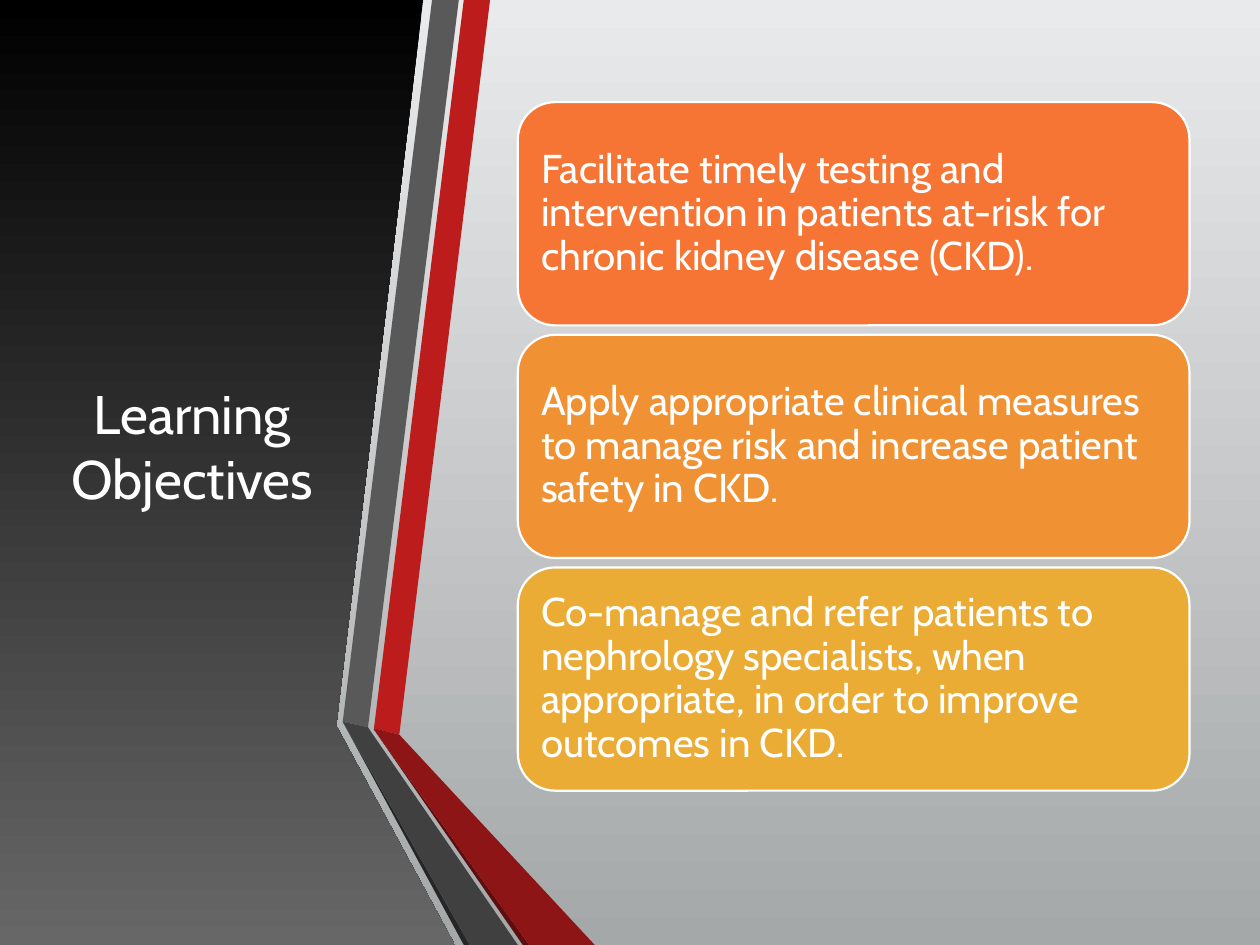
from pptx import Presentation
from pptx.dml.color import RGBColor
from pptx.enum.shapes import MSO_SHAPE as Form
from pptx.enum.text import MSO_ANCHOR as Anchor, MSO_AUTO_SIZE as Fit, PP_ALIGN as Align
from pptx.util import Cm, Pt

TITLE = "Learning Objectives"
GOALS = [
    ("Facilitate timely testing and intervention in patients at-risk for chronic kidney disease (CKD).", "F67534"),
    ("Apply appropriate clinical measures to manage risk and increase patient safety in CKD.", "F09234"),
    ("Co-manage and refer patients to nephrology specialists, when appropriate, in order to improve outcomes in CKD.", "EAAC35"),
]
PANEL = [(0, 0), (8.53, 0), (6.78, 14.63), (9.17, 19.05), (0, 19.05)]
BANDS = [
    ("BC1C1C", [(7.54, 14.68), (8.05, 14.81), (9.88, 0), (9.35, 0)]),
    ("595959", [(9.25, 0), (8.71, 0), (6.91, 14.55), (7.42, 14.66)]),
    ("262626", [(6.91, 14.55), (9.35, 19.05), (9.47, 19.05)]),
    ("5E0E0E", [(7.54, 14.71), (10.54, 19.05), (10.67, 19.05)]),
    ("8D1515", [(7.54, 14.71), (10.67, 19.05), (11.99, 19.05), (8.05, 14.81), (7.54, 14.68)]),
    ("404040", [(10.44, 19.05), (7.52, 14.81), (7.42, 14.66), (6.91, 14.55), (9.47, 19.05)]),
]
LEFT, TOP, WIDE, HIGH, STEP = 10.44, 2.06, 13.54, 4.5, 4.69


def color(code):
    return RGBColor.from_string(code)


def paint(fill, code):
    fill.solid()
    fill.fore_color.rgb = color(code)


def blend(fill, *codes):
    fill.gradient()
    fill.gradient_angle = 270
    for stop, code in zip(fill.gradient_stops, codes):
        stop.color.rgb = color(code)


def write(shape, text, size=23, align=Align.LEFT, space=0.9):
    frame = shape.text_frame
    frame.word_wrap = True
    frame.auto_size = Fit.NONE
    frame.vertical_anchor = Anchor.MIDDLE
    frame.margin_left = frame.margin_right = Cm(0.25)
    frame.margin_top = frame.margin_bottom = Cm(0.25)
    para = frame.paragraphs[0]
    para.alignment = align
    para.line_spacing = space
    run = para.add_run()
    run.text = text
    run.font.name = "Cabin"
    run.font.size = Pt(size)
    run.font.color.rgb = color("FFFFFF")


def outline(shapes, points):
    first, *rest = [(Cm(x), Cm(y)) for x, y in points]
    pen = shapes.build_freeform(*first)
    pen.add_line_segments(rest)
    shape = pen.convert_to_shape()
    shape.shadow.inherit = False
    shape.line.fill.background()
    return shape


def main():
    deck = Presentation()
    deck.slide_width, deck.slide_height = Cm(25.4), Cm(19.05)
    slide = deck.slides.add_slide(deck.slide_layouts[5])
    shapes = slide.shapes
    blend(slide.background.fill, "E9EAEB", "A5A8A9")

    blend(outline(shapes, PANEL).fill, "000000", "676767")
    for code, points in BANDS:
        paint(outline(shapes, points).fill, code)

    title = shapes.title
    title.left, title.top, title.width, title.height = map(Cm, (1.12, 1.9, 5.51, 14.17))
    write(title, TITLE, size=31, align=Align.CENTER, space=1)
    shapes._spTree.append(title._element)

    for row, (text, code) in enumerate(GOALS):
        box = map(Cm, (LEFT, TOP + row * STEP, WIDE, HIGH))
        card = shapes.add_shape(Form.ROUNDED_RECTANGLE, *box)
        card.shadow.inherit = False
        paint(card.fill, code)
        paint(card.line.fill, "FFFFFF")
        card.line.width = Pt(1.25)
        write(card, text)

    deck.save("out.pptx")


if __name__ == "__main__":
    main()
